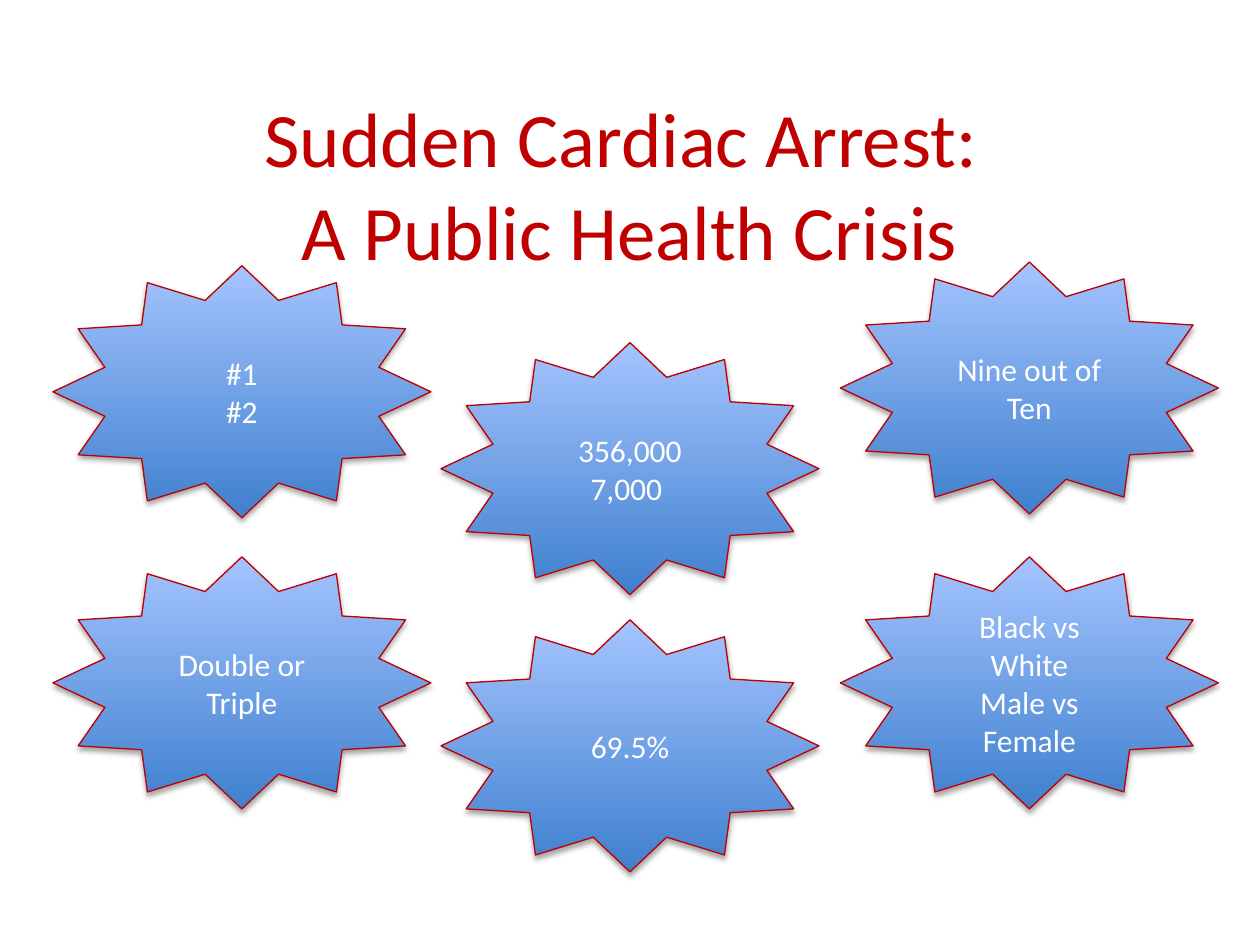
from dataclasses import dataclass

from lxml import etree
from pptx import Presentation
from pptx.dml.color import RGBColor
from pptx.enum import shapes, text
from pptx.oxml import ns
from pptx.util import Inches, Pt

COLORS = {"red": "C00000", "deep": "3F80CE", "pale": "A4C4FF",
          "white": "FFFFFF", "shadow": "000000"}
FONT = "Calibri"
STAR_WIDTH, STAR_HEIGHT = 3, 2
LEFT, MIDDLE, RIGHT = 0.42, 3.5, 6.67


@dataclass
class Star:
    left: float
    top: float
    lines: tuple[str, ...]


STARS = [
    Star(LEFT, 2.11, ("#1", "#2")),
    Star(MIDDLE, 2.72, ("356,000", "7,000 ")),
    Star(RIGHT, 2.08, ("Nine out of Ten",)),
    Star(LEFT, 4.42, ("Double or Triple",)),
    Star(MIDDLE, 4.92, ("69.5%",)),
    Star(RIGHT, 4.42, ("Black vs White", "Male vs Female")),
]


def rgb(name: str) -> RGBColor:
    return RGBColor.from_string(COLORS[name])


def style_text(frame, size: int, color: str) -> None:
    frame.word_wrap = True
    frame.vertical_anchor = text.MSO_ANCHOR.MIDDLE
    for paragraph in frame.paragraphs:
        paragraph.alignment = text.PP_ALIGN.CENTER
        paragraph.font.name = FONT
        paragraph.font.size = Pt(size)
        paragraph.font.color.rgb = rgb(color)


def add_shadow(shape) -> None:
    """Give the shape a soft shadow straight below it."""
    shape.shadow.inherit = False
    effects = shape._element.spPr.find(ns.qn("a:effectLst"))
    shadow = etree.SubElement(effects, ns.qn("a:outerShdw"), blurRad=str(Pt(3.1)),
                              dist=str(Pt(1.8)), dir="5400000", rotWithShape="0")
    color = etree.SubElement(shadow, ns.qn("a:srgbClr"), val=COLORS["shadow"])
    etree.SubElement(color, ns.qn("a:alpha"), val="35000")


def add_star(slide, star: Star) -> None:
    shape = slide.shapes.add_shape(
        shapes.MSO_SHAPE.STAR_12_POINT, Inches(star.left), Inches(star.top),
        Inches(STAR_WIDTH), Inches(STAR_HEIGHT))
    shape.fill.gradient()
    shape.fill.gradient_angle = 90
    for stop, color in zip(shape.fill.gradient_stops, ("deep", "pale")):
        stop.color.rgb = rgb(color)
    shape.line.color.rgb = rgb("red")
    shape.line.width = Pt(0.75)
    add_shadow(shape)
    shape.text_frame.text = "\n".join(star.lines)
    style_text(shape.text_frame, 18, "white")


def add_title(slide, wording: str) -> None:
    title = slide.shapes.title
    title.left, title.top = Inches(0.5), Inches(0.83)
    title.width, title.height = Inches(9), Inches(1.25)
    title.text_frame.text = wording
    title.text_frame.auto_size = text.MSO_AUTO_SIZE.NONE
    style_text(title.text_frame, 44, "red")


def main() -> None:
    presentation = Presentation()
    presentation.slide_width, presentation.slide_height = Inches(10), Inches(7.5)
    title_only = presentation.slide_layouts[5]
    slide = presentation.slides.add_slide(title_only)
    add_title(slide, "Sudden Cardiac Arrest: \vA Public Health Crisis")
    for star in STARS:
        add_star(slide, star)
    presentation.save("out.pptx")


if __name__ == "__main__":
    main()
